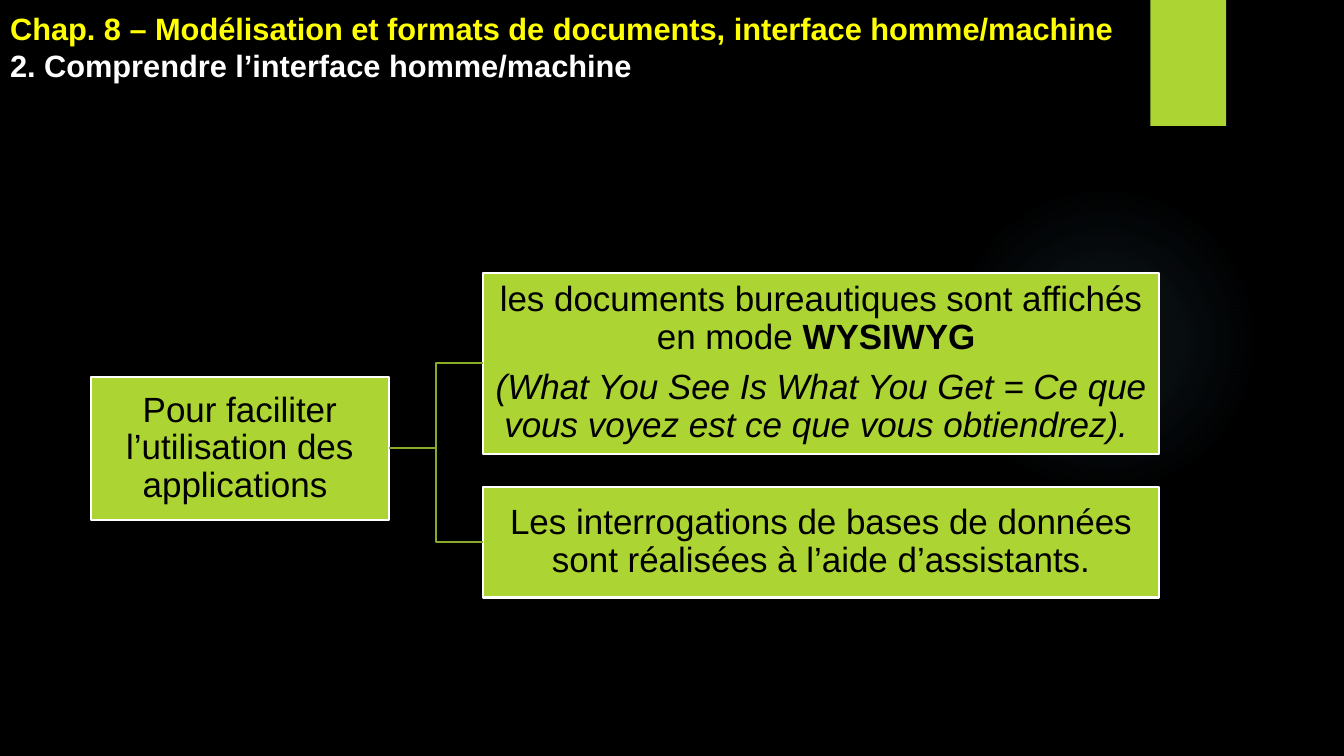
from lxml.etree import SubElement
from pptx import Presentation
from pptx.dml.color import RGBColor
from pptx.enum.shapes import MSO_CONNECTOR, MSO_SHAPE
from pptx.enum.text import MSO_ANCHOR, MSO_AUTO_SIZE, PP_ALIGN
from pptx.oxml import parse_xml
from pptx.oxml.ns import nsdecls, qn
from pptx.util import Pt

COLORS = {
    "background": "000000",
    "accent": "ACD433",
    "link": "8AAA29",
    "border": "FFFFFF",
    "glow": "7AC4F0",
    "chapter": "FFFF00",
    "section": "FFFFFF",
    "text": "000000",
}
RIGHT_SIDE, LEFT_SIDE = 3, 1


def color(name):
    return RGBColor.from_string(COLORS[name])


def add_run(paragraph, text, size=25, fill="text", bold=False, italic=False):
    run = paragraph.add_run()
    run.text = text
    run.font.name = "Arial"
    run.font.size = Pt(size)
    run.font.bold = bold
    run.font.italic = italic
    run.font.color.rgb = color(fill)


def add_block(slide, preset, left, top, width, height):
    block = slide.shapes.add_shape(preset, Pt(left), Pt(top), Pt(width), Pt(height))
    block.shadow.inherit = False
    block.fill.solid()
    block.fill.fore_color.rgb = color("accent")
    block.line.fill.background()
    return block


def add_glow(slide, left, top, diameter):
    glow = add_block(slide, MSO_SHAPE.OVAL, left, top, diameter, diameter)
    stops = "".join(
        f'<a:gs pos="{position * 1000}"><a:srgbClr val="{COLORS["glow"]}">'
        f'<a:alpha val="{opacity * 1000}"/></a:srgbClr></a:gs>'
        for position, opacity in [(0, 7), (36, 6), (69, 0), (100, 0)]
    )
    gradient = parse_xml(
        f'<a:gradFill {nsdecls("a")}><a:gsLst>{stops}</a:gsLst><a:path path="circle">'
        '<a:fillToRect l="50000" t="50000" r="50000" b="50000"/></a:path></a:gradFill>'
    )
    properties = glow.element.spPr
    properties.replace(properties.find(qn("a:solidFill")), gradient)


def add_box(slide, left, top, width, height, paragraphs):
    box = add_block(slide, MSO_SHAPE.RECTANGLE, left, top, width, height)
    box.line.color.rgb = color("border")
    box.line.width = Pt(1.5)
    frame = box.text_frame
    frame.word_wrap = True
    frame.vertical_anchor = MSO_ANCHOR.MIDDLE
    frame.margin_left = frame.margin_right = Pt(1.25)
    frame.margin_top = frame.margin_bottom = Pt(1.25)
    for index, runs in enumerate(paragraphs):
        paragraph = frame.add_paragraph() if index else frame.paragraphs[0]
        paragraph.alignment = PP_ALIGN.CENTER
        paragraph.line_spacing = 0.9
        paragraph.space_after = Pt(8.75)
        for text, style in runs:
            add_run(paragraph, text, **style)
    return box


def add_link(slide, source, target):
    link = slide.shapes.add_connector(MSO_CONNECTOR.ELBOW, 0, 0, 0, 0)
    link.begin_connect(source, RIGHT_SIDE)
    link.end_connect(target, LEFT_SIDE)
    link.line.color.rgb = color("link")
    link.line.width = Pt(1.5)
    SubElement(link.element.spPr, qn("a:effectLst"))


def set_title(slide, lines):
    title = slide.shapes.title
    title.left, title.top, title.width, title.height = Pt(0), Pt(-3.6), Pt(811), Pt(67)
    frame = title.text_frame
    frame.word_wrap = True
    frame.auto_size = MSO_AUTO_SIZE.NONE
    frame.vertical_anchor = MSO_ANCHOR.BOTTOM
    for index, (text, fill) in enumerate(lines):
        paragraph = frame.add_paragraph() if index else frame.paragraphs[0]
        paragraph.alignment = PP_ALIGN.LEFT
        add_run(paragraph, text, size=22, fill=fill, bold=True)


def main():
    presentation = Presentation()
    presentation.slide_width, presentation.slide_height = Pt(960), Pt(540)
    slide = presentation.slides.add_slide(presentation.slide_layouts[5])
    slide.background.fill.solid()
    slide.background.fill.fore_color.rgb = color("background")

    add_glow(slide, 677.5, 131.8, 221.8)
    add_block(slide, MSO_SHAPE.RECTANGLE, 821.8, 0, 54, 90)
    set_title(slide, [
        ("Chap. 8 – Modélisation et formats de documents, interface homme/machine", "chapter"),
        ("2. Comprendre l’interface homme/machine", "section"),
    ])

    goal = add_box(slide, 64.8, 269.2, 213, 102.3, [
        [("Pour faciliter l’utilisation des applications ", {})],
    ])
    wysiwyg = add_box(slide, 344.9, 195, 483, 129.2, [
        [("les documents bureautiques sont affichés en mode ", {}),
         ("WYSIWYG ", {"bold": True})],
        [("(What You See Is What You Get = Ce que vous voyez est ce que vous obtiendrez). ",
          {"italic": True})],
    ])
    assistants = add_box(slide, 344.9, 347.8, 483, 79, [
        [("Les interrogations de bases de données sont réalisées à l’aide d’assistants.", {})],
    ])
    for means in (wysiwyg, assistants):
        add_link(slide, goal, means)

    presentation.save("out.pptx")


if __name__ == "__main__":
    main()
